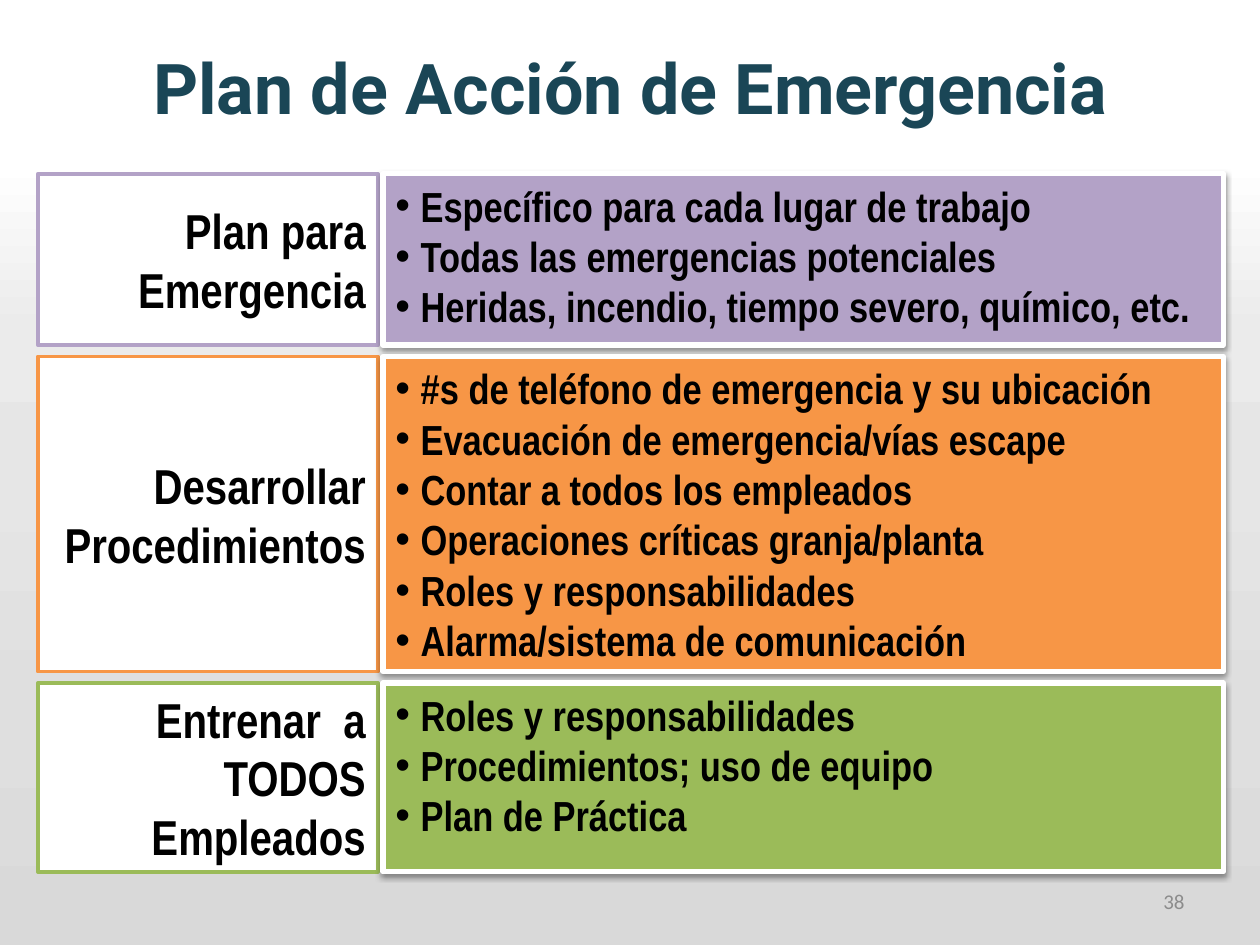
from dataclasses import dataclass

from lxml import etree
from pptx import Presentation
from pptx.dml.color import RGBColor
from pptx.enum.shapes import MSO_SHAPE
from pptx.enum.text import MSO_ANCHOR, PP_ALIGN
from pptx.oxml.ns import qn
from pptx.util import Inches, Pt

RECTANGLE = MSO_SHAPE.RECTANGLE
TOP, MIDDLE = MSO_ANCHOR.TOP, MSO_ANCHOR.MIDDLE
LEFT, CENTER, RIGHT = PP_ALIGN.LEFT, PP_ALIGN.CENTER, PP_ALIGN.RIGHT

WHITE = RGBColor(0xFF, 0xFF, 0xFF)
BLACK = RGBColor(0x00, 0x00, 0x00)
NAVY = RGBColor(0x1A, 0x46, 0x56)
GRAY = RGBColor(0x8C, 0x8C, 0x8C)
PURPLE = RGBColor(0xB3, 0xA2, 0xC7)
ORANGE = RGBColor(0xF7, 0x96, 0x46)
GREEN = RGBColor(0x9B, 0xBB, 0x59)
BACKGROUND_STOPS = {17: WHITE, 35: RGBColor(0xEB, 0xEB, 0xEB), 50: RGBColor(0xE6, 0xE6, 0xE6),
                    75: RGBColor(0xDF, 0xDF, 0xDF), 100: RGBColor(0xD9, 0xD9, 0xD9)}

TITLE_FONT = {"name": "Roboto", "size": Pt(40), "bold": True}
LABEL_FONT = {"name": "Arial Narrow", "size": Pt(28), "bold": True}
LIST_FONT = {"name": "Arial Narrow", "size": Pt(24), "bold": True}
NUMBER_FONT = {"name": "Calibri", "size": Pt(12), "bold": False}

# Grid, in inches
LABEL_LEFT, LABEL_WIDTH = 0.3, 2.7
COLUMN_GAP, LIST_WIDTH = 0.04, 6.67
LIST_LEFT = LABEL_LEFT + LABEL_WIDTH + COLUMN_GAP
FIRST_ROW_TOP, ROW_GAP = 1.38, 0.09
BULLET_INDENT = Inches(0.2)


@dataclass(frozen=True)
class Stage:
    label: str
    color: RGBColor
    height: float
    items: tuple[str, ...]


STAGES = (
    Stage("Plan para Emergencia", PURPLE, 1.36, (
        "Específico para cada lugar de trabajo",
        "Todas las emergencias potenciales",
        "Heridas, incendio, tiempo severo, químico, etc.")),
    Stage("Desarrollar Procedimientos", ORANGE, 2.5, (
        "#s de teléfono de emergencia y su ubicación",
        "Evacuación de emergencia/vías escape",
        "Contar a todos los empleados",
        "Operaciones críticas granja/planta",
        "Roles y responsabilidades",
        "Alarma/sistema de comunicación")),
    Stage("Entrenar  a TODOS Empleados", GREEN, 1.5, (
        "Roles y responsabilidades",
        "Procedimientos; uso de equipo",
        "Plan de Práctica")),
)


def add_color(parent, color: RGBColor):
    return etree.SubElement(parent, qn("a:srgbClr"), val=str(color))


def paint_background(slide) -> None:
    fill = slide.background.fill
    fill.gradient()
    fill.gradient_angle = 270
    stops = slide.element.find(".//" + qn("a:gsLst"))
    for stop in list(stops):
        stops.remove(stop)
    for percent, color in BACKGROUND_STOPS.items():
        add_color(etree.SubElement(stops, qn("a:gs"), pos=str(percent * 1000)), color)


def add_bullet(paragraph) -> None:
    properties = paragraph._p.get_or_add_pPr()
    properties.set("marL", str(BULLET_INDENT))
    properties.set("indent", str(-BULLET_INDENT))
    etree.SubElement(properties, qn("a:buFont"), typeface="Arial")
    etree.SubElement(properties, qn("a:buChar"), char="•")


def write(shape, lines: tuple[str, ...], font: dict, color: RGBColor, align: PP_ALIGN,
          anchor: MSO_ANCHOR, bulleted: bool = False) -> None:
    frame = shape.text_frame
    frame.word_wrap = True
    frame.vertical_anchor = anchor
    for index, line in enumerate(lines):
        paragraph = frame.add_paragraph() if index else frame.paragraphs[0]
        if bulleted:
            add_bullet(paragraph)
        paragraph.alignment = align
        run = paragraph.add_run()
        run.text = line
        for attribute, value in font.items():
            setattr(run.font, attribute, value)
        run.font.color.rgb = color


def add_panel(slide, left: float, top: float, width: float, height: float,
              fill: RGBColor, border: RGBColor, border_width: float):
    panel = slide.shapes.add_shape(RECTANGLE, Inches(left), Inches(top), Inches(width), Inches(height))
    panel.shadow.inherit = False
    panel.fill.solid()
    panel.fill.fore_color.rgb = fill
    panel.line.color.rgb = border
    panel.line.width = Pt(border_width)
    return panel


def cast_shadow(shape) -> None:
    effects = shape._element.spPr.find(qn("a:effectLst"))
    shadow = etree.SubElement(effects, qn("a:outerShdw"), blurRad=str(Pt(3.1)),
                              dist=str(Pt(1.6)), dir="5400000", rotWithShape="0")
    etree.SubElement(add_color(shadow, BLACK), qn("a:alpha"), val="38000")


def add_stage(slide, stage: Stage, top: float) -> None:
    label = add_panel(slide, LABEL_LEFT, top, LABEL_WIDTH, stage.height, WHITE, stage.color, 2)
    write(label, (stage.label,), LABEL_FONT, BLACK, RIGHT, MIDDLE)
    details = add_panel(slide, LIST_LEFT, top, LIST_WIDTH, stage.height, stage.color, WHITE, 3)
    cast_shadow(details)
    write(details, stage.items, LIST_FONT, BLACK, LEFT, TOP, bulleted=True)


def main() -> None:
    presentation = Presentation()
    presentation.slide_width, presentation.slide_height = Inches(10), Inches(7.5)
    slide = presentation.slides.add_slide(presentation.slide_layouts[5])
    paint_background(slide)

    title = slide.shapes.title
    title.left, title.top, title.width, title.height = map(Inches, (0.5, 0.3, 9, 1.25))
    write(title, ("Plan de Acción de Emergencia",), TITLE_FONT, NAVY, CENTER, TOP)

    top = FIRST_ROW_TOP
    for stage in STAGES:
        add_stage(slide, stage, top)
        top += stage.height + ROW_GAP

    page_number = slide.shapes.add_textbox(*map(Inches, (7.17, 6.95, 2.33, 0.4)))
    write(page_number, ("38",), NUMBER_FONT, GRAY, RIGHT, MIDDLE)

    presentation.save("out.pptx")


if __name__ == "__main__":
    main()
